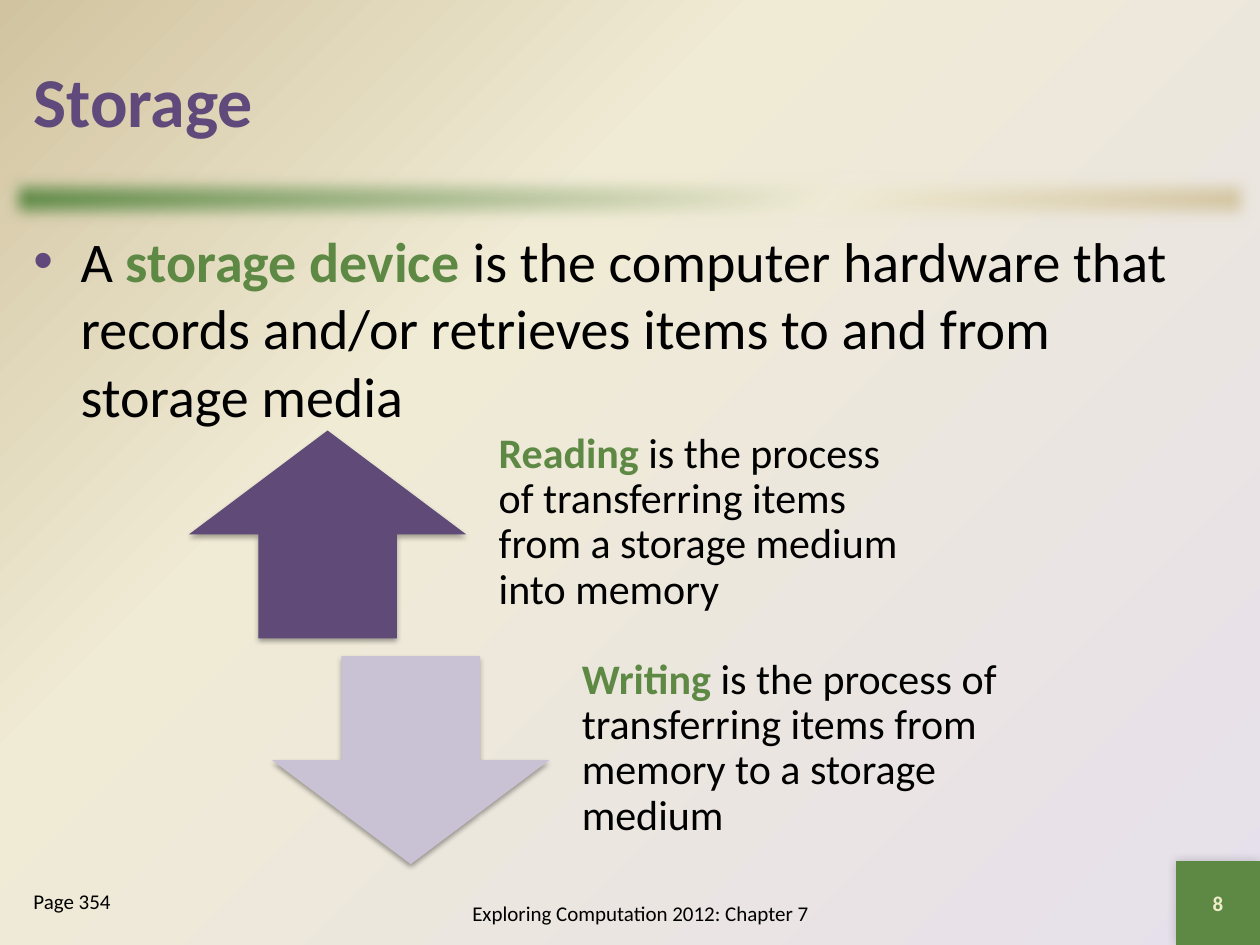
from lxml import etree
from pptx import Presentation
from pptx.dml.color import RGBColor
from pptx.enum.shapes import MSO_SHAPE
from pptx.enum.text import MSO_ANCHOR, PP_ALIGN
from pptx.oxml.ns import qn
from pptx.util import Pt

RECTANGLE = MSO_SHAPE.RECTANGLE
UP_ARROW, DOWN_ARROW = MSO_SHAPE.UP_ARROW, MSO_SHAPE.DOWN_ARROW
TOP, MIDDLE = MSO_ANCHOR.TOP, MSO_ANCHOR.MIDDLE
LEFT, CENTER = PP_ALIGN.LEFT, PP_ALIGN.CENTER

FONT = "Calibri"
GREEN, PURPLE, BLACK, CREAM = "5E8945", "604A7B", "000000", "EEEBCA"
SAND = [(65, "F0EBD5"), (100, "D1C39F")]
BADGE = (672, 492, 48, 48)

# arrow shape, arrow colour, left, top, term, definition
PROCESSES = [
    (UP_ARROW, "5F4A78", 108, 246, "Reading",
     " is the process of transferring items from a storage medium into memory"),
    (DOWN_ARROW, "C9C2D4", 155.5, 375, "Writing",
     " is the process of transferring items from memory to a storage medium"),
]
ARROW_WIDTH, PROCESS_HEIGHT = 158.4, 118.8
TEXT_OFFSET, TEXT_WIDTH = 163.5, 268.5


def rgb(value):
    return RGBColor.from_string(value)


def points(*lengths):
    return [Pt(length) for length in lengths]


def child(parent, tag, **attributes):
    element = etree.SubElement(parent, qn(tag))
    for name, value in attributes.items():
        element.set(name, str(value))
    return element


def set_gradient(fill, owner, stops):
    """Swap the solid fill inside owner for a gradient and return it."""
    fill.solid()
    fill.fore_color.rgb = rgb(stops[0][1])
    solid = owner.find(".//" + qn("a:solidFill"))
    gradient = etree.Element(qn("a:gradFill"), rotWithShape="1")
    stop_list = child(gradient, "a:gsLst")
    for position, color in stops:
        stop = child(stop_list, "a:gs", pos=position * 1000)
        child(stop, "a:srgbClr", val=color)
    solid.getparent().replace(solid, gradient)
    return gradient


def add_background(slide):
    gradient = set_gradient(slide.background.fill, slide._element,
                            [(0, "E6E0EC")] + SAND)
    circle = child(gradient, "a:path", path="circle")
    child(circle, "a:fillToRect", l=100000, t=100000)


def add_plain_shape(slide, kind, box):
    shape = slide.shapes.add_shape(kind, *points(*box))
    shape.line.fill.background()
    shape.shadow.inherit = False
    return shape, shape._element.spPr.find(qn("a:effectLst"))


def add_soft_bar(slide, box):
    bar, effects = add_plain_shape(slide, RECTANGLE, box)
    gradient = set_gradient(bar.fill, bar._element.spPr, [(0, GREEN)] + SAND)
    child(gradient, "a:lin", ang=45 * 60000, scaled=0)
    child(effects, "a:softEdge", rad=Pt(10))


def add_shadowed_shape(slide, kind, box, color, opacity, blur, distance, angle):
    shape, effects = add_plain_shape(slide, kind, box)
    shape.fill.solid()
    shape.fill.fore_color.rgb = rgb(color)
    shadow = child(effects, "a:outerShdw", blurRad=Pt(blur), dist=Pt(distance),
                   dir=angle * 60000, rotWithShape=0)
    shadow_color = child(shadow, "a:srgbClr", val=BLACK)
    child(shadow_color, "a:alpha", val=opacity * 1000)


def add_text(slide, box, size, runs, anchor=TOP, align=LEFT,
             insets=(7.2, 3.6, 7.2, 3.6)):
    """Add one paragraph of (text, color, bold) runs and return it."""
    frame = slide.shapes.add_textbox(*points(*box)).text_frame
    frame.word_wrap = True
    frame.vertical_anchor = anchor
    (frame.margin_left, frame.margin_top,
     frame.margin_right, frame.margin_bottom) = points(*insets)
    paragraph = frame.paragraphs[0]
    paragraph.alignment = align
    for text, color, bold in runs:
        run = paragraph.add_run()
        run.text = text
        run.font.name = FONT
        run.font.size = Pt(size)
        run.font.bold = bold
        run.font.color.rgb = rgb(color)
    return paragraph


def add_bullet(paragraph, color, indent):
    properties = paragraph._p.get_or_add_pPr()
    properties.set("marL", str(Pt(indent)))
    properties.set("indent", str(-Pt(indent)))
    child(child(properties, "a:buClr"), "a:srgbClr", val=color)
    child(properties, "a:buFont", typeface="Arial")
    child(properties, "a:buChar", char="•")


def add_process(slide, arrow, color, left, top, term, definition):
    add_shadowed_shape(slide, arrow, (left, top, ARROW_WIDTH, PROCESS_HEIGHT),
                       color, 35, 3.1, 1.8, 90)
    box = (left + TEXT_OFFSET, top, TEXT_WIDTH, PROCESS_HEIGHT)
    paragraph = add_text(slide, box, 24,
                         [(term, GREEN, True), (definition, BLACK, False)],
                         MIDDLE, insets=(13.5, 0, 13.5, 13.5))
    paragraph.line_spacing = 0.9
    paragraph.space_after = Pt(8.4)


def main():
    presentation = Presentation()
    presentation.slide_width, presentation.slide_height = points(720, 540)
    slide = presentation.slides.add_slide(presentation.slide_layouts[6])

    add_background(slide)
    add_soft_bar(slide, (0, 96, 720, 36))
    add_shadowed_shape(slide, RECTANGLE, BADGE, GREEN, 20, 6, 0, 225)

    add_text(slide, (12, 12, 696, 90), 40, [("Storage", PURPLE, True)], MIDDLE)
    statement = add_text(slide, (12, 126, 696, 366), 32, [
        ("A ", BLACK, False),
        ("storage device ", GREEN, True),
        ("is the computer hardware that records and/or retrieves items "
         "to and from storage media", BLACK, False),
    ])
    statement.space_before = Pt(6.4)
    add_bullet(statement, PURPLE, 27)

    add_text(slide, (216, 504, 300, 36), 12,
             [("Exploring Computation 2012: Chapter 7", BLACK, False)],
             MIDDLE, CENTER)
    add_text(slide, BADGE, 12, [("8", CREAM, True)], MIDDLE, CENTER)
    page = add_text(slide, (12, 504, 132, 36), 12, [("Page 354", BLACK, False)])
    page.space_before = Pt(2.4)

    for process in PROCESSES:
        add_process(slide, *process)

    presentation.save("out.pptx")


if __name__ == "__main__":
    main()
